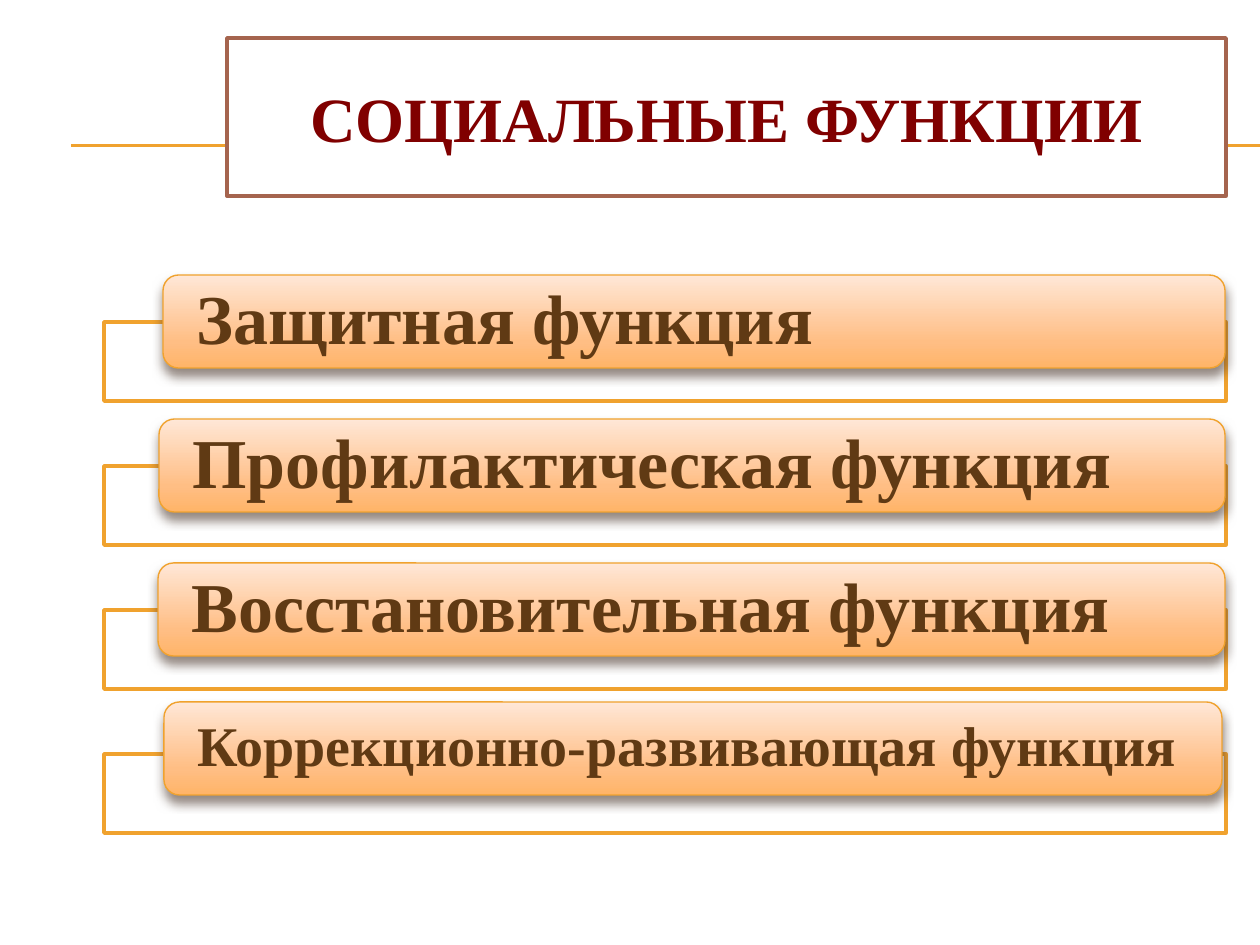
import pptx
import pptx.dml.color
import pptx.enum.dml
import pptx.enum.shapes
import pptx.enum.text
import pptx.oxml.ns
import pptx.util
from lxml import etree

RGBColor = pptx.dml.color.RGBColor
MSO_SHAPE = pptx.enum.shapes.MSO_SHAPE
Pt = pptx.util.Pt
qn = pptx.oxml.ns.qn

WHITE = RGBColor(0xFF, 0xFF, 0xFF)
AMBER = RGBColor(0xF0, 0xA2, 0x2E)
RUST = RGBColor(0xA5, 0x64, 0x4E)
MAROON = RGBColor(0x80, 0x00, 0x00)
BROWN = RGBColor(0x60, 0x3A, 0x14)
SHADOW = RGBColor(0x4E, 0x3B, 0x30)
BAR_STOPS = [
    (0, RGBColor(0xFF, 0xE7, 0xD7)),
    (72, RGBColor(0xFF, 0xBE, 0x84)),
    (100, RGBColor(0xFF, 0xB4, 0x68)),
]
FONT = "Times New Roman"

# Text, size in points, bar left, bar right, rise of the bar above its frame
FUNCTIONS = [
    ("Защитная функция", 40, 163, 1225, 47),
    ("Профилактическая функция", 40, 159, 1225, 47),
    ("Восстановительная функция", 40, 158, 1225, 47),
    ("Коррекционно-развивающая функция", 32, 164, 1222, 52),
]


def px(length):
    return round(length * 914400 / 126)


def set_outline(shape, color, width):
    shape.line.color.rgb = color
    shape.line.width = Pt(width)


def format_text(frame, text, size, color, align):
    frame.text = text
    frame.word_wrap = True
    frame.vertical_anchor = pptx.enum.text.MSO_ANCHOR.MIDDLE
    paragraph = frame.paragraphs[0]
    paragraph.alignment = align
    paragraph.font.name = FONT
    paragraph.font.size = Pt(size)
    paragraph.font.bold = True
    paragraph.font.color.rgb = color
    return paragraph


def add_color(parent, color, alpha=None):
    node = etree.SubElement(parent, qn("a:srgbClr"), val=str(color))
    if alpha is not None:
        etree.SubElement(node, qn("a:alpha"), val=str(alpha * 1000))


def add_rule(slide, left, right, y):
    rule = slide.shapes.add_connector(
        pptx.enum.shapes.MSO_CONNECTOR.STRAIGHT, px(left), px(y), px(right), px(y))
    set_outline(rule, AMBER, 0.75)
    etree.SubElement(rule._element.spPr, qn("a:effectLst"))


def place_title(slide, left, top, width, height):
    # The double rule runs behind the title box
    for y in (145, 146):
        add_rule(slide, 71, 1260, y)
    title = slide.shapes.title
    slide.shapes._spTree.append(title._element)
    title.left, title.top = px(left), px(top)
    title.width, title.height = px(width), px(height)
    title.fill.solid()
    title.fill.fore_color.rgb = WHITE
    set_outline(title, RUST, 2)
    format_text(title.text_frame, "СОЦИАЛЬНЫЕ ФУНКЦИИ", 36, MAROON,
                pptx.enum.text.PP_ALIGN.CENTER)


def add_frame(slide, left, top, width, height):
    frame = slide.shapes.add_shape(
        MSO_SHAPE.RECTANGLE, px(left), px(top), px(width), px(height))
    frame.shadow.inherit = False
    frame.fill.solid()
    frame.fill.fore_color.rgb = WHITE
    white = frame._element.spPr.find(qn("a:solidFill"))[0]
    etree.SubElement(white, qn("a:alpha"), val="90000")
    set_outline(frame, AMBER, 2)


def add_bar(slide, left, top, width, height, text, size):
    bar = slide.shapes.add_shape(
        MSO_SHAPE.ROUNDED_RECTANGLE, px(left), px(top), px(width), px(height))
    set_outline(bar, AMBER, 0.79)

    # Gradient from top to bottom
    bar.fill.gradient()
    bar.fill.gradient_angle = 270
    properties = bar._element.spPr
    stops = properties.find(qn("a:gradFill")).find(qn("a:gsLst"))
    for stop in list(stops):
        stops.remove(stop)
    for position, color in BAR_STOPS:
        add_color(etree.SubElement(stops, qn("a:gs"), pos=str(position * 1000)), color)

    # Soft shadow below
    bar.shadow.inherit = False
    shadow = etree.SubElement(
        properties.find(qn("a:effectLst")), qn("a:outerShdw"),
        blurRad=str(Pt(6)), dist=str(Pt(4)), dir="5400000", rotWithShape="0")
    add_color(shadow, SHADOW, 60)

    # The rounded corners add a little to the margins; the right one stays
    # narrow so that the longest label keeps to one line
    label = bar.text_frame
    label.margin_left, label.margin_right = px(29), px(10)
    label.margin_top = label.margin_bottom = 0
    paragraph = format_text(label, text, size, BROWN, pptx.enum.text.PP_ALIGN.LEFT)
    paragraph.line_spacing = 0.9


def place_functions(slide, left, top, width, pitch):
    for row, (text, size, bar_left, bar_right, rise) in enumerate(FUNCTIONS):
        y = top + row * pitch
        add_frame(slide, left, y, width, 79)
        add_bar(slide, bar_left, y - rise, bar_right - bar_left, 93, text, size)


def main():
    deck = pptx.Presentation()
    deck.slide_width, deck.slide_height = px(1260), px(945)
    slide = deck.slides.add_slide(deck.slide_layouts[5])
    place_title(slide, 227, 38, 999, 158)
    place_functions(slide, 104, 322, 1122, 144)
    deck.save("out.pptx")


if __name__ == "__main__":
    main()
